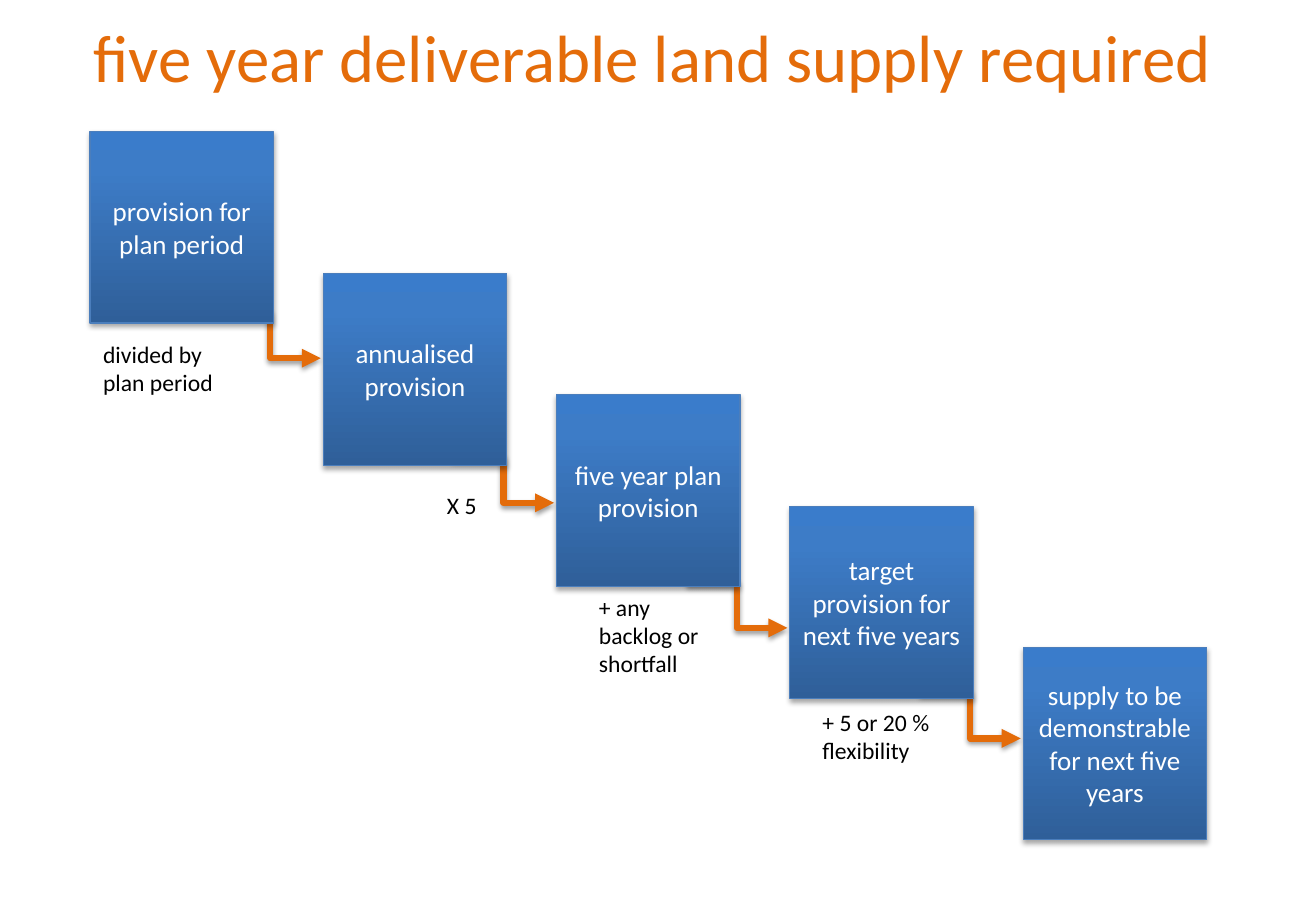
"""Build the slide on the steps to a five year deliverable land supply."""
from pptx import Presentation
from pptx.dml.color import RGBColor
from pptx.enum.shapes import MSO_CONNECTOR, MSO_SHAPE
from pptx.enum.text import MSO_ANCHOR, PP_ALIGN
from pptx.oxml import parse_xml
from pptx.oxml.ns import nsdecls
from pptx.util import Inches, Pt

RECT, ELBOW = MSO_SHAPE.RECTANGLE, MSO_CONNECTOR.ELBOW
MIDDLE, TOP = MSO_ANCHOR.MIDDLE, MSO_ANCHOR.TOP
LEFT, CENTER = PP_ALIGN.LEFT, PP_ALIGN.CENTER
NS = nsdecls("a")
COLORS = {"orange": "E46C0A", "white": "FFFFFF", "black": "000000", "edge": "4B7EBC",
          "dark": "2F5F99", "mid": "3D7CC7", "light": "3A7CCB"}
STOPS = [(0, "dark"), (80, "mid"), (100, "light")]


def set_text(sp, text, size, color, align=LEFT, anchor=TOP):
    tf = sp.text_frame
    tf.word_wrap = True
    tf.vertical_anchor = anchor
    p = tf.paragraphs[0]
    p.text = text
    p.alignment = align
    p.font.name = "Calibri"
    p.font.size = Pt(size)
    p.font.color.rgb = RGBColor.from_string(COLORS[color])


def add_shadow(sp, distance, opacity):
    sp._element.spPr.append(parse_xml(
        f'<a:effectLst {NS}><a:outerShdw blurRad="{Pt(3.1)}" dist="{Pt(distance)}" '
        f'dir="5400000" rotWithShape="0"><a:srgbClr val="{COLORS["black"]}">'
        f'<a:alpha val="{opacity * 1000}"/></a:srgbClr></a:outerShdw></a:effectLst>'))


prs = Presentation()
prs.slide_width, prs.slide_height = Inches(10.83), Inches(7.5)
s = prs.slides.add_slide(prs.slide_layouts[6])

title = s.shapes.add_textbox(Inches(0.67), Inches(-0.17), Inches(9.75), Inches(1.25))
set_text(title, "five year deliverable land supply required", 39.6, "orange", anchor=MIDDLE)

# step text, box top, arrow top, label text, label left, top, width, height
STEPS = [
    ("provision for plan period", 1.08, None, None),
    ("annualised provision", 2.25, 2.58, ("divided by plan period", 0.75, 2.75, 1.33, 0.57)),
    ("five year plan provision", 3.25, 3.77, ("X 5", 3.58, 3.99, 0.83, 0.34)),
    ("target provision for next five years", 4.17, 4.8,
     ("+ any backlog or shortfall", 4.83, 4.83, 1.25, 0.81)),
    ("supply to be demonstrable for next five years", 5.33, 5.71,
     ("+ 5 or 20 % flexibility", 6.67, 5.78, 1.25, 0.57)),
]
for i, (step, top, arrow_top, label) in reversed(list(enumerate(STEPS))):
    left = 0.74 + 1.92 * i
    if label:
        arrow = s.shapes.add_connector(ELBOW, Inches(left - 0.85), Inches(arrow_top),
                                       Inches(left - 0.02), Inches(arrow_top + 0.37))
        arrow.line.width = Pt(3.75)
        arrow.line.color.rgb = RGBColor.from_string(COLORS["orange"])
        arrow.line._get_or_add_ln().append(parse_xml(f'<a:tailEnd {NS} type="triangle"/>'))
        add_shadow(arrow, 1.6, 38)

        words, x, y, w, h = label
        tb = s.shapes.add_textbox(Inches(x), Inches(y), Inches(w), Inches(h))
        set_text(tb, words, 14, "black")

    box = s.shapes.add_shape(RECT, Inches(left), Inches(top), Inches(1.51), Inches(1.58))
    stops = "".join(f'<a:gs pos="{pos * 1000}"><a:srgbClr val="{COLORS[name]}"/></a:gs>'
                    for pos, name in STOPS)
    box._element.spPr.insert(2, parse_xml(
        f'<a:gradFill {NS} rotWithShape="1"><a:gsLst>{stops}</a:gsLst>'
        f'<a:lin ang="16200000" scaled="0"/></a:gradFill>'))
    box.line.color.rgb = RGBColor.from_string(COLORS["edge"])
    box.line.width = Pt(0.75)
    add_shadow(box, 1.8, 35)
    set_text(box, step, 16, "white", CENTER, MIDDLE)

prs.save("out.pptx")
